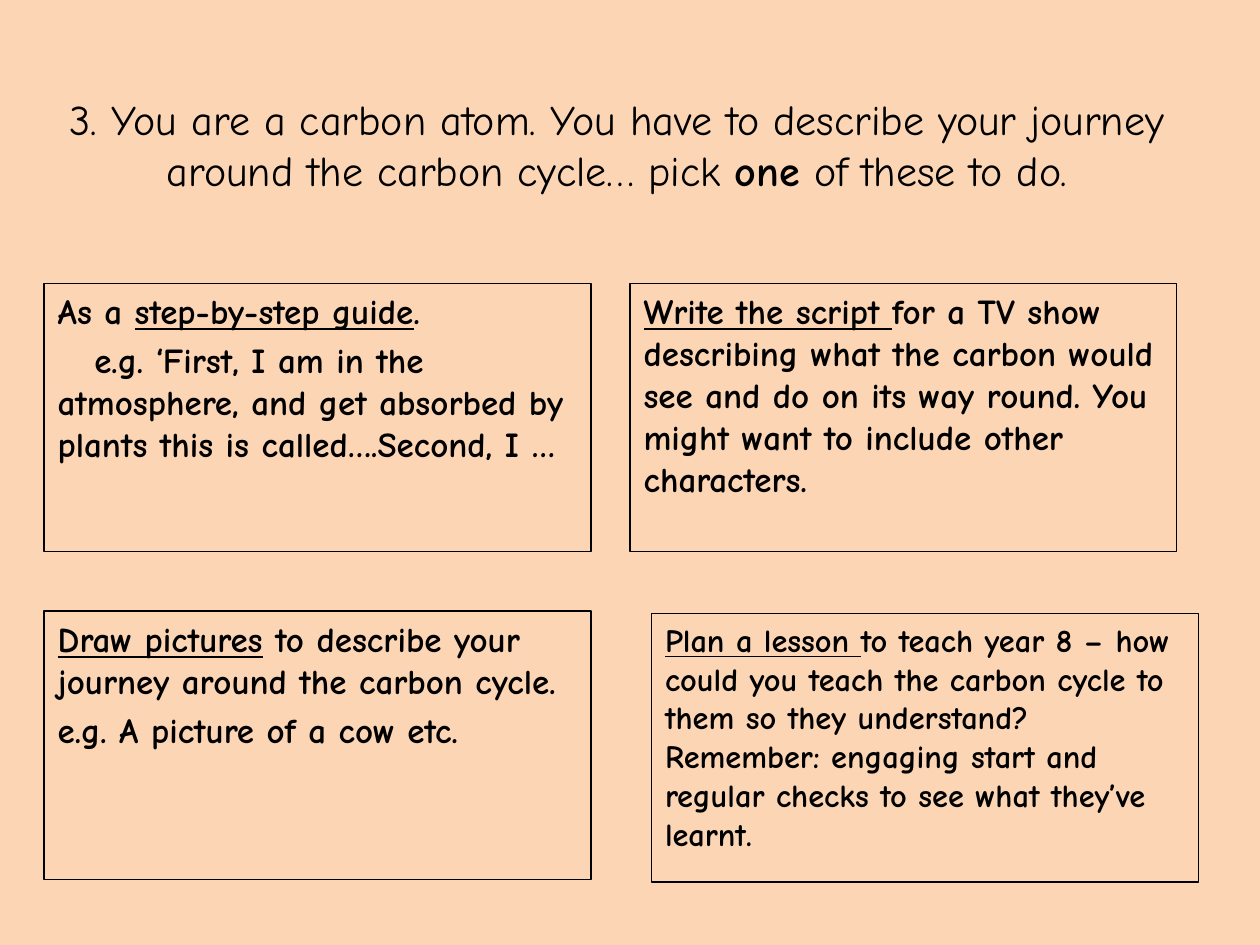
from pptx import Presentation
from pptx.dml.color import RGBColor
from pptx.enum.shapes import MSO_SHAPE
from pptx.enum.text import MSO_ANCHOR, PP_ALIGN
from pptx.util import Inches, Pt

INK = "000000"
PEACH = "FCD5B5"
FONT = "Comic Neue"


def color(hex_string):
    return RGBColor.from_string(hex_string)


def add_runs(paragraph, parts, size):
    """Add (text, bold, underline) parts as runs of one size."""
    for text, bold, underline in parts:
        run = paragraph.add_run()
        run.text = text
        run.font.name = FONT
        run.font.size = Pt(size)
        run.font.bold = bold
        run.font.underline = underline
        run.font.color.rgb = color(INK)


prs = Presentation()
prs.slide_width, prs.slide_height = Inches(10), Inches(7.5)
slide = prs.slides.add_slide(prs.slide_layouts[6])
slide.background.fill.solid()
slide.background.fill.fore_color.rgb = color(PEACH)

# Task heading
heading = slide.shapes.add_textbox(Inches(0.28), Inches(0.52), Inches(9.23), Inches(1.25))
heading.text_frame.word_wrap = True
heading.text_frame.vertical_anchor = MSO_ANCHOR.MIDDLE
question = heading.text_frame.paragraphs[0]
question.alignment = PP_ALIGN.CENTER
add_runs(question, [
    ("3. You are a carbon atom. You have to describe your journey "
     "around the carbon cycle… pick ", False, False),
    ("one", True, False),
    (" of these to do.", False, False),
], 24)

# Four options in a 2 x 2 grid; the last one sits slightly off the grid
LEFT, TOP = 0.35, 2.25
COLUMN, ROW = 4.65, 2.6
CARD_WIDTH, CARD_HEIGHT = 4.34, 2.13
EXAMPLE_INDENT = 0.29

# column, row, (x, y) nudge, text size, paragraphs of (first-line indent, parts)
options = [
    (0, 0, (0, 0), 20, [
        (0, [("As a ", True, False), ("step-by-step guide", True, True), (".", True, False)]),
        (EXAMPLE_INDENT, [("e.g. ‘First, I am in the atmosphere, and get absorbed by "
                           "plants this is called….Second, I …", True, False)]),
    ]),
    (1, 0, (0, 0), 20, [
        (0, [("Write the script ", True, True),
             ("for a TV show describing what the carbon would see and do on its way "
              "round. You might want to include other characters.", True, False)]),
    ]),
    (0, 1, (0, 0), 20, [
        (0, [("Draw pictures", True, True),
             (" to describe your journey around the carbon cycle.", True, False)]),
        (0, [("e.g. A picture of a cow etc.", True, False)]),
    ]),
    (1, 1, (0.17, 0.02), 18.5, [
        (0, [("Plan a lesson ", True, True),
             ("to teach year 8 – how could you teach the carbon cycle to them so they "
              "understand? Remember: engaging start and regular checks to see what "
              "they’ve learnt.", True, False)]),
    ]),
]

for column, row, (nudge_x, nudge_y), size, paragraphs in options:
    card = slide.shapes.add_shape(
        MSO_SHAPE.RECTANGLE,
        Inches(LEFT + column * COLUMN + nudge_x), Inches(TOP + row * ROW + nudge_y),
        Inches(CARD_WIDTH), Inches(CARD_HEIGHT))
    card.shadow.inherit = False
    card.fill.background()
    card.line.color.rgb = color(INK)
    card.line.width = Pt(0.75)
    frame = card.text_frame
    frame.word_wrap = True
    frame.vertical_anchor = MSO_ANCHOR.TOP
    for index, (indent, parts) in enumerate(paragraphs):
        paragraph = frame.add_paragraph() if index else frame.paragraphs[0]
        paragraph.alignment = PP_ALIGN.LEFT
        paragraph.space_before = Pt(size * 0.2)
        properties = paragraph._p.get_or_add_pPr()
        properties.set("marL", str(Inches(0.01)))
        properties.set("indent", str(Inches(indent)))
        add_runs(paragraph, parts, size)

prs.save("out.pptx")
